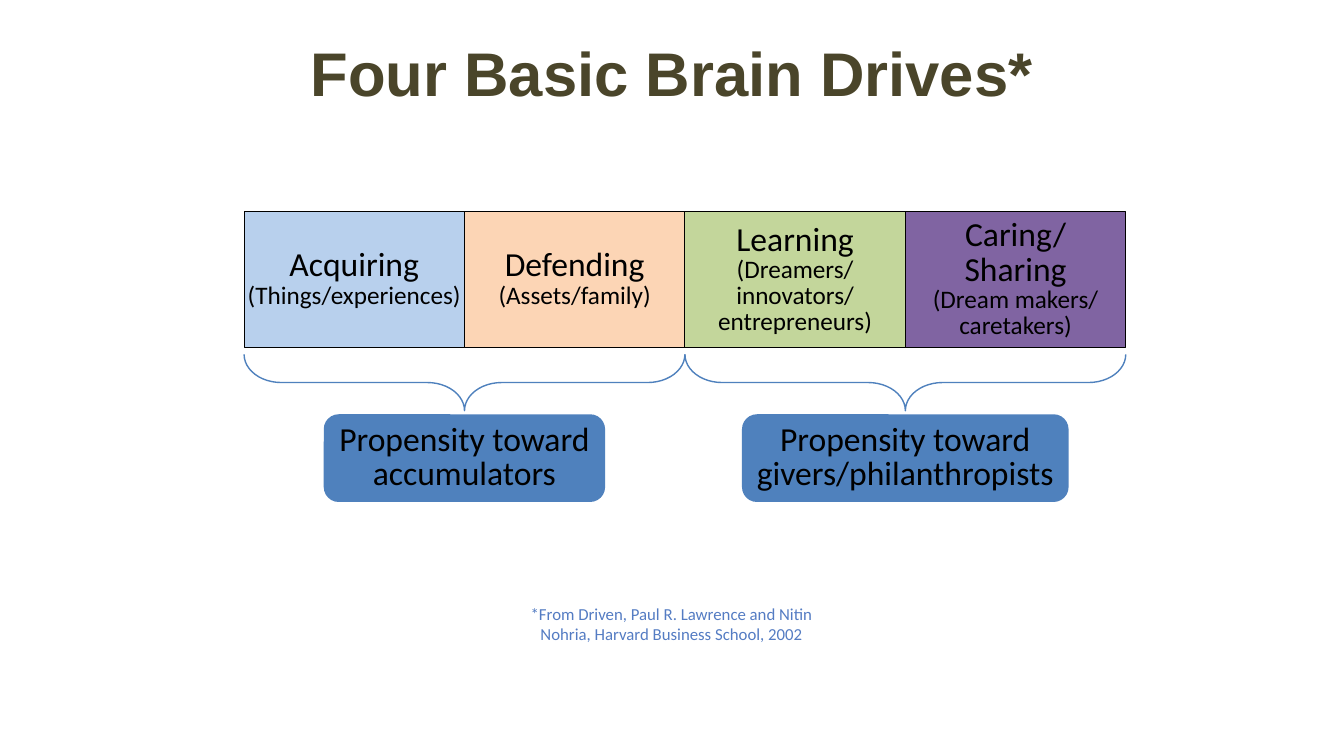
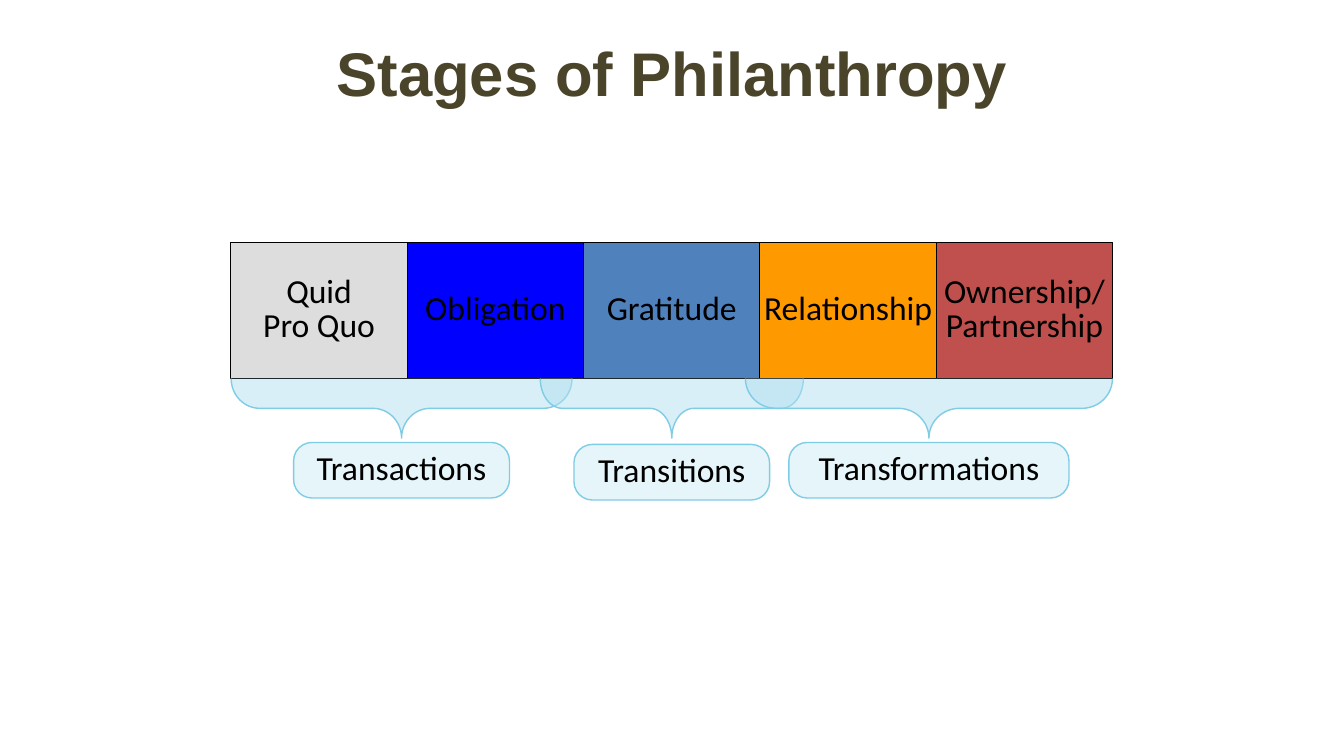
"""Build two slides on brain drives and the stages of philanthropy."""
from dataclasses import dataclass
from typing import Optional

from lxml import etree
from pptx import Presentation
from pptx.dml.color import RGBColor
from pptx.enum.shapes import MSO_SHAPE
from pptx.enum.text import MSO_ANCHOR, MSO_AUTO_SIZE, PP_ALIGN
from pptx.oxml.ns import qn
from pptx.util import Cm, Pt

SLIDE_W, SLIDE_H = 33.87, 19.05
STRIP_W, STRIP_H = 22.22, 3.43
TITLE, BLACK, NOTE = "4A452A", "000000", "547CC3"
BLUE, PALE, AQUA, AQUA_LINE = "4F81BD", "E5F5FA", "B2E0F0", "7FCCE5"


@dataclass
class Stage:
    name: str
    fill: str
    detail: str = ""


@dataclass
class Bracket:
    text: str
    center: float
    span: float
    curve: float
    label_w: float
    label_top: float


@dataclass
class BracketStyle:
    top: float
    depth: float
    label_h: float
    corner: float
    label_fill: str
    line: str
    brace_fill: Optional[str] = None
    label_line: Optional[str] = None
    wrap: bool = True
    anchor: MSO_ANCHOR = MSO_ANCHOR.TOP


def rgb(color: str) -> RGBColor:
    return RGBColor.from_string(color)


def add_shape(shapes, kind, x: float, y: float, w: float, h: float,
              fill: Optional[str], line: Optional[str], weight: float = 1):
    s = shapes.add_shape(kind, Cm(x), Cm(y), Cm(w), Cm(h))
    s.shadow.inherit = False
    if fill:
        s.fill.solid()
        s.fill.fore_color.rgb = rgb(fill)
    else:
        s.fill.background()
    if line:
        s.line.color.rgb = rgb(line)
        s.line.width = Pt(weight)
    else:
        s.line.fill.background()
    return s


def set_text(tf, lines, color: str = BLACK, font: str = "Calibri",
             bold: bool = False, spacing: Optional[float] = 0.85) -> None:
    for i, (text, size) in enumerate(lines):
        p = tf.paragraphs[0] if i == 0 else tf.add_paragraph()
        p.text = text
        p.alignment = PP_ALIGN.CENTER
        p.line_spacing = spacing
        p.font.size, p.font.name, p.font.bold = Pt(size), font, bold
        p.font.color.rgb = rgb(color)


def add_text(slide, x: float, y: float, w: float, h: float, text: str, size: float,
             color: str, font: str, bold: bool = False, anchor=MSO_ANCHOR.TOP) -> None:
    tf = slide.shapes.add_textbox(Cm(x), Cm(y), Cm(w), Cm(h)).text_frame
    tf.word_wrap = True
    tf.vertical_anchor = anchor
    set_text(tf, [(text, size)], color, font, bold, None)


def add_titled_slide(prs, title: str):
    slide = prs.slides.add_slide(prs.slide_layouts[6])
    add_text(slide, 5.51, 0.76, 22.86, 3.18, title, 44, TITLE, "Arial", True)
    return slide


def add_strip(slide, left: float, top: float, inset: float, stages: list[Stage]) -> None:
    w = STRIP_W / len(stages)
    for i, stage in enumerate(stages):
        s = add_shape(slide.shapes, MSO_SHAPE.RECTANGLE, left + i * w, top, w, STRIP_H,
                      stage.fill, BLACK, 0.75)
        tf = s.text_frame
        tf.word_wrap = True
        tf.vertical_anchor = MSO_ANCHOR.MIDDLE
        tf.margin_left = tf.margin_right = tf.margin_top = tf.margin_bottom = Cm(inset)
        lines = [(stage.name, 24)]
        if stage.detail:
            lines.append((stage.detail, 18))
        set_text(tf, lines)


def add_bracket(slide, b: Bracket, style: BracketStyle) -> None:
    shapes = slide.shapes.add_group_shape().shapes
    brace = add_shape(shapes, MSO_SHAPE.RIGHT_BRACE, b.center - style.depth / 2,
                      style.top + (style.depth - b.span) / 2, style.depth, b.span,
                      style.brace_fill, style.line)
    brace.rotation = 90
    brace.adjustments[0] = b.curve
    if style.brace_fill:
        clr = brace.fill._xPr.find(qn("a:solidFill"))[0]
        etree.SubElement(clr, qn("a:alpha")).set("val", "50000")
    label = add_shape(shapes, MSO_SHAPE.ROUNDED_RECTANGLE, b.center - b.label_w / 2,
                      b.label_top, b.label_w, style.label_h, style.label_fill,
                      style.label_line)
    label.adjustments[0] = style.corner
    tf = label.text_frame
    tf.word_wrap = style.wrap
    tf.auto_size = MSO_AUTO_SIZE.SHAPE_TO_FIT_TEXT
    tf.vertical_anchor = style.anchor
    set_text(tf, [(b.text, 24)])


def build_drives(prs) -> None:
    slide = add_titled_slide(prs, "Four Basic Brain Drives*")
    left, half = 6.15, STRIP_W / 2
    add_strip(slide, left, 5.33, 0, [
        Stage("Acquiring", "B8D0ED", "(Things/experiences)"),
        Stage("Defending", "FCD5B5", "(Assets/family)"),
        Stage("Learning", "C3D69B", "(Dreamers/\ninnovators/\nentrepreneurs)"),
        Stage("Caring/\nSharing", "8064A2", "(Dream makers/\ncaretakers)"),
    ])
    style = BracketStyle(8.93, 1.42, 2.21, 0.17, BLUE, BLUE, wrap=False,
                         anchor=MSO_ANCHOR.MIDDLE)
    labels = [("Propensity toward\naccumulators", 7.09),
              ("Propensity toward\ngivers/philanthropists", 8.23)]
    for i, (text, w) in enumerate(labels):
        add_bracket(slide, Bracket(text, left + (i + 0.5) * half, half, 0.66, w, 10.44), style)
    add_text(slide, 12.9, 15.21, 8.05, 1.02,
             "*From Driven, Paul R. Lawrence and Nitin Nohria, Harvard Business School, 2002",
             12, NOTE, "Calibri", anchor=MSO_ANCHOR.MIDDLE)


def build_stages(prs) -> None:
    slide = add_titled_slide(prs, "Stages of Philanthropy")
    add_strip(slide, 5.82, 6.1, 0.05, [
        Stage("Quid\nPro Quo", "DDDDDD"),
        Stage("Obligation", "0000FF"),
        Stage("Gratitude", BLUE),
        Stage("Relationship", "FF9900"),
        Stage("Ownership/\nPartnership", "C0504D"),
    ])
    style = BracketStyle(9.54, 1.5, 1.4, 0.33, PALE, AQUA_LINE, AQUA, AQUA_LINE)
    for bracket in [
        Bracket("Transactions", 10.12, 8.59, 0.48, 5.44, 11.15),
        Bracket("Transitions", 16.93, 6.63, 0.37, 4.93, 11.2),
        Bracket("Transformations", 23.41, 9.25, 0.51, 7.06, 11.15),
    ]:
        add_bracket(slide, bracket, style)


def main() -> None:
    prs = Presentation()
    prs.slide_width, prs.slide_height = Cm(SLIDE_W), Cm(SLIDE_H)
    build_drives(prs)
    build_stages(prs)
    prs.save("out.pptx")


if __name__ == "__main__":
    main()
